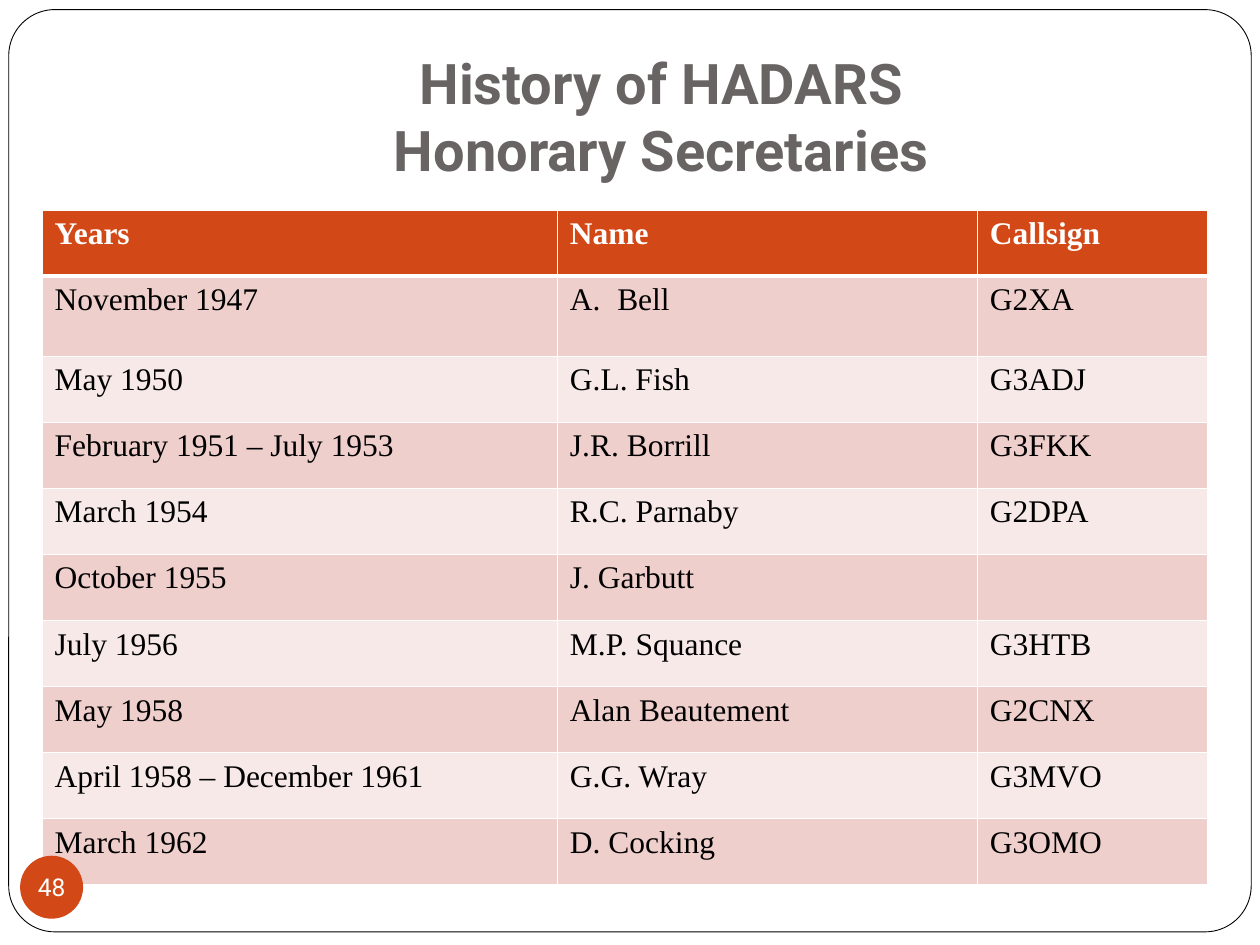
from lxml.etree import SubElement
from pptx import Presentation
from pptx.dml.color import RGBColor
from pptx.enum.shapes import MSO_SHAPE as Preset
from pptx.enum.text import MSO_ANCHOR as Anchor, PP_ALIGN as Align
from pptx.oxml.ns import qn
from pptx.util import Pt

COLORS = {
    "white": "FFFFFF",
    "black": "000000",
    "title": "696464",
    "accent": "D34817",
    "band_dark": "EFCFCC",
    "band_light": "F7E9E8",
}
HEADING_FONT = "Roboto"
TABLE_FONT = "Times New Roman"

HEADINGS = ("Years", "Name", "Callsign")
SECRETARIES = [
    ("November 1947", "Bell", "G2XA"),
    ("May 1950", "G.L. Fish", "G3ADJ"),
    ("February 1951 – July 1953", "J.R. Borrill", "G3FKK"),
    ("March 1954", "R.C. Parnaby", "G2DPA"),
    ("October 1955", "J. Garbutt", ""),
    ("July 1956", "M.P. Squance", "G3HTB"),
    ("May 1958", "Alan Beautement", "G2CNX"),
    ("April 1958 – December 1961", "G.G. Wray", "G3MVO"),
    ("March 1962", "D. Cocking", "G3OMO"),
]
COLUMN_WIDTHS = (294.5, 240, 131.5)
ROW_HEIGHT, FIRST_ENTRY_HEIGHT = 37.75, 46


def rgb(name):
    return RGBColor.from_string(COLORS[name])


def write(frame, text, *, size, font, color, bold=False, align=Align.LEFT):
    """Fill the first paragraph; a newline becomes a line break."""
    paragraph = frame.paragraphs[0]
    paragraph.text = text
    paragraph.alignment = align
    for run in paragraph.runs:
        run.font.size = Pt(size)
        run.font.name = font
        run.font.bold = bold
        run.font.color.rgb = rgb(color)
    return paragraph


def set_margins(frame, left, top, right, bottom):
    frame.margin_left, frame.margin_top = Pt(left), Pt(top)
    frame.margin_right, frame.margin_bottom = Pt(right), Pt(bottom)


def add_preset(slide, preset, box, fill, line=None):
    shape = slide.shapes.add_shape(preset, *map(Pt, box))
    shape.shadow.inherit = False
    shape.fill.solid()
    shape.fill.fore_color.rgb = rgb(fill)
    if line:
        shape.line.color.rgb = rgb(line)
        shape.line.width = Pt(0.5)
    else:
        shape.line.fill.background()
    return shape


def add_title(slide, text):
    frame = slide.shapes.add_textbox(Pt(72), Pt(21.6), Pt(612), Pt(90)).text_frame
    frame.word_wrap = True
    frame.vertical_anchor = Anchor.BOTTOM
    set_margins(frame, 7.2, 3.6, 7.2, 7.2)
    write(frame, text, size=32, font=HEADING_FONT, color="title",
          bold=True, align=Align.CENTER)


def set_borders(cell, top=1, bottom=1):
    properties = cell._tc.get_or_add_tcPr()
    for side, width in (("L", 1), ("R", 1), ("T", top), ("B", bottom)):
        border = SubElement(properties, qn(f"a:ln{side}"), w=str(Pt(width)))
        fill = SubElement(border, qn("a:solidFill"))
        SubElement(fill, qn("a:srgbClr"), val=COLORS["white"])


def number_with_letter(paragraph, indent):
    properties = paragraph._p.get_or_add_pPr()
    properties.set("marL", str(Pt(indent)))
    properties.set("indent", str(-Pt(indent)))
    SubElement(properties, qn("a:buAutoNum"), type="alphaUcPeriod")


def add_secretaries(slide):
    rows = [HEADINGS, *SECRETARIES]
    heights = [ROW_HEIGHT] * len(rows)
    heights[1] = FIRST_ENTRY_HEIGHT
    table = slide.shapes.add_table(
        len(rows), len(HEADINGS), Pt(24), Pt(120),
        Pt(sum(COLUMN_WIDTHS)), Pt(sum(heights))).table
    for column, width in zip(table.columns, COLUMN_WIDTHS):
        column.width = Pt(width)

    for r, (entries, height) in enumerate(zip(rows, heights)):
        table.rows[r].height = Pt(height)
        header = r == 0
        band = "accent" if header else ("band_light", "band_dark")[r % 2]
        for c, entry in enumerate(entries):
            cell = table.cell(r, c)
            # A thicker rule separates the header from the entries
            set_borders(cell, top=3 if r == 1 else 1, bottom=3 if header else 1)
            cell.fill.solid()
            cell.fill.fore_color.rgb = rgb(band)
            write(cell.text_frame, entry, size=18, font=TABLE_FONT,
                  color="white" if header else "black", bold=header)

    # The first name's initial is an automatic letter
    number_with_letter(table.cell(1, 1).text_frame.paragraphs[0], 27)


def add_page_number(slide, number):
    badge = add_preset(slide, Preset.OVAL, (11.5, 489, 36, 36), "accent")
    frame = badge.text_frame
    frame.word_wrap = False
    frame.vertical_anchor = Anchor.MIDDLE
    set_margins(frame, 0, 0, 0, 0)
    write(frame, number, size=14, font=HEADING_FONT, color="white",
          align=Align.CENTER)


def main():
    deck = Presentation()
    deck.slide_width, deck.slide_height = Pt(720), Pt(540)
    slide = deck.slides.add_slide(deck.slide_layouts[6])

    # Rounded page frame
    page = add_preset(slide, Preset.ROUNDED_RECTANGLE,
                      (5, 5.5, 710, 527), "white", line="black")
    page.adjustments[0] = 0.05

    # Heading, table and page number
    add_title(slide, "History of HADARS\nHonorary Secretaries")
    add_secretaries(slide)
    add_page_number(slide, "48")
    deck.save("out.pptx")


if __name__ == "__main__":
    main()
